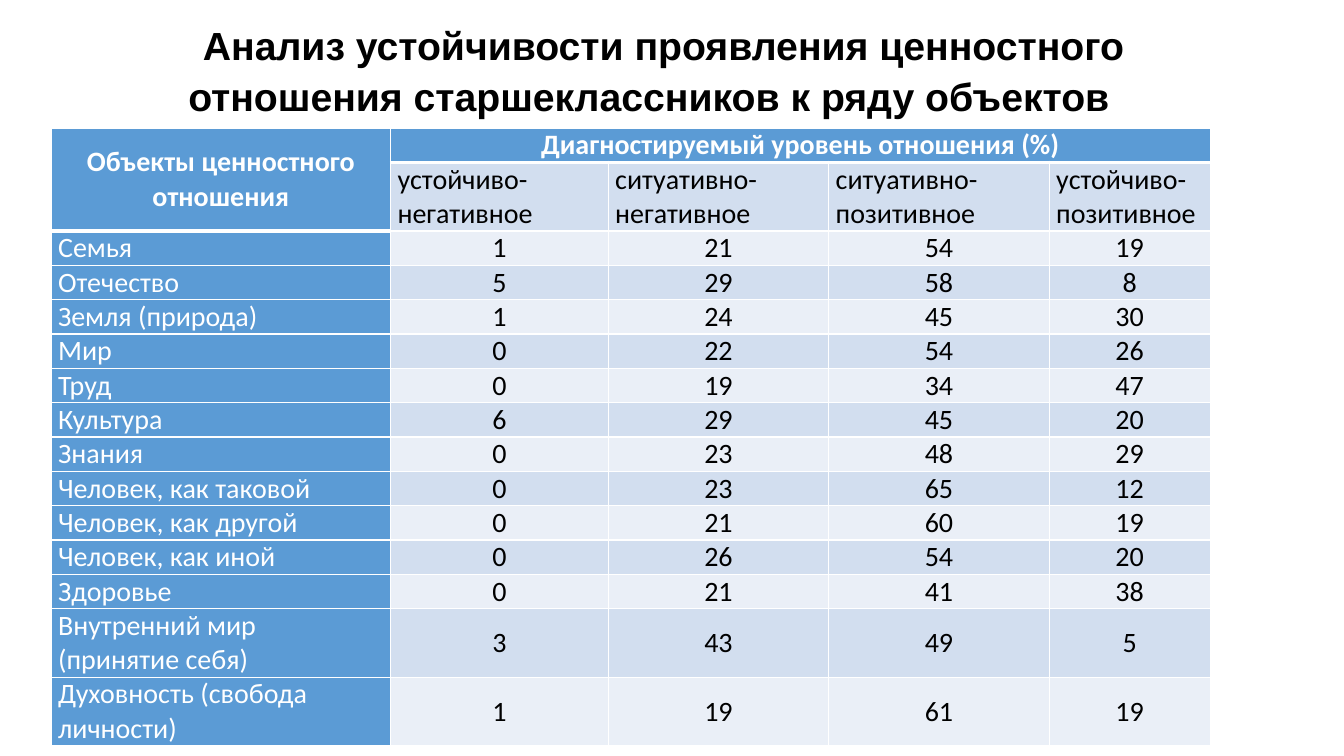
"""Builds a slide with a table of senior pupils' attitudes to a range of values."""
from dataclasses import dataclass

from lxml.etree import SubElement
from pptx import Presentation
from pptx.dml.color import RGBColor
from pptx.enum.text import MSO_ANCHOR as Anchor, MSO_AUTO_SIZE as AutoSize, PP_ALIGN as Align
from pptx.oxml.ns import qn
from pptx.util import Pt

BLACK = RGBColor(0x00, 0x00, 0x00)
WHITE = RGBColor(0xFF, 0xFF, 0xFF)
BLUE = RGBColor(0x5B, 0x9B, 0xD5)
DARK_BAND = RGBColor(0xD2, 0xDE, 0xEF)
LIGHT_BAND = RGBColor(0xEA, 0xEF, 0xF7)

TITLE = "Анализ устойчивости проявления ценностного отношения старшеклассников к ряду объектов"
CORNER = "Объекты ценностного отношения"
SCALE = "Диагностируемый уровень отношения (%)"
LEVELS = ("устойчиво-негативное", "ситуативно-негативное",
          "ситуативно-позитивное", "устойчиво-позитивное")
COLUMN_WIDTHS = (242.5, 155.5, 157.5, 157.5, 115)
LINE_HEIGHT = 24


@dataclass(frozen=True)
class Attitude:
    subject: str
    percents: tuple[int, ...]
    lines: int = 1


ATTITUDES = (
    Attitude("Семья", (1, 21, 54, 19)),
    Attitude("Отечество", (5, 29, 58, 8)),
    Attitude("Земля (природа)", (1, 24, 45, 30)),
    Attitude("Мир", (0, 22, 54, 26)),
    Attitude("Труд", (0, 19, 34, 47)),
    Attitude("Культура", (6, 29, 45, 20)),
    Attitude("Знания", (0, 23, 48, 29)),
    Attitude("Человек, как таковой", (0, 23, 65, 12)),
    Attitude("Человек, как другой", (0, 21, 60, 19)),
    Attitude("Человек, как иной", (0, 26, 54, 20)),
    Attitude("Здоровье", (0, 21, 41, 38)),
    Attitude("Внутренний мир (принятие себя)", (3, 43, 49, 5), lines=2),
    Attitude("Духовность (свобода личности)", (1, 19, 61, 19), lines=2),
)


def write(frame, text: str, *, font: str, size: float, color: RGBColor,
          bold: bool = False, align: Align = Align.LEFT):
    """Write one formatted paragraph into a text frame and return it."""
    para = frame.paragraphs[0]
    para.alignment = align
    span = para.add_run()
    span.text = text
    span.font.name = font
    span.font.size = Pt(size)
    span.font.bold = bold
    span.font.color.rgb = color
    return para


def add_title(page) -> None:
    """Fill the title placeholder."""
    box = page.shapes.title
    box.left, box.top, box.width, box.height = Pt(103.5), Pt(10), Pt(720), Pt(97)
    frame = box.text_frame
    frame.word_wrap = True
    frame.auto_size = AutoSize.NONE
    frame.vertical_anchor = Anchor.MIDDLE
    frame.margin_bottom = Pt(22.5)
    para = write(frame, TITLE, font="Arial", size=28, color=BLACK, bold=True, align=Align.CENTER)
    para.line_spacing = 1.07
    para._p.get_or_add_pPr().set("indent", str(Pt(21)))


def set_borders(cell, top: float, bottom: float) -> None:
    """Give a cell white borders; the sides are one point wide."""
    properties = cell._tc.get_or_add_tcPr()
    for tag, width in (("a:lnL", 1), ("a:lnR", 1), ("a:lnT", top), ("a:lnB", bottom)):
        line = SubElement(properties, qn(tag), w=str(Pt(width)))
        fill = SubElement(line, qn("a:solidFill"))
        SubElement(fill, qn("a:srgbClr"), val=str(WHITE))


def add_attitude_table(page) -> None:
    """Draw the table with its two-level header."""
    rows = [(CORNER, SCALE, "", "", ""), ("", *LEVELS)]
    rows += [(item.subject, *map(str, item.percents)) for item in ATTITUDES]
    line_counts = [1, 2] + [item.lines for item in ATTITUDES]
    table = page.shapes.add_table(
        len(rows), len(COLUMN_WIDTHS), Pt(36.5), Pt(91.5),
        Pt(sum(COLUMN_WIDTHS)), Pt(LINE_HEIGHT * sum(line_counts))).table
    table.first_row = table.horz_banding = False
    for column, width in zip(table.columns, COLUMN_WIDTHS):
        column.width = Pt(width)
    for row, count in zip(table.rows, line_counts):
        row.height = Pt(LINE_HEIGHT * count)
    table.cell(0, 0).merge(table.cell(1, 0))
    table.cell(0, 1).merge(table.cell(0, 4))

    for row, texts in enumerate(rows):
        for column, text in enumerate(texts):
            cell = table.cell(row, column)
            header_rows = 1 if column else 2
            is_header = row < header_rows
            is_value = row > 1 and column > 0
            is_blue = is_header or column == 0
            set_borders(cell, top=3 if row == header_rows else 1, bottom=3 if is_header else 1)
            cell.fill.solid()
            cell.fill.fore_color.rgb = BLUE if is_blue else DARK_BAND if row % 2 else LIGHT_BAND
            cell.margin_left = cell.margin_right = Pt(5)
            cell.margin_top = cell.margin_bottom = Pt(0)
            centered = is_header or is_value
            cell.vertical_anchor = Anchor.MIDDLE if centered else Anchor.TOP
            if text:
                write(cell.text_frame, text, font="Calibri", size=20, bold=is_header,
                      color=WHITE if is_blue else BLACK,
                      align=Align.CENTER if centered else Align.LEFT)


def main() -> None:
    """Build and save the deck."""
    deck = Presentation()
    deck.slide_width, deck.slide_height = Pt(960), Pt(540)
    page = deck.slides.add_slide(deck.slide_layouts[5])
    add_title(page)
    add_attitude_table(page)
    deck.save("out.pptx")


if __name__ == "__main__":
    main()
